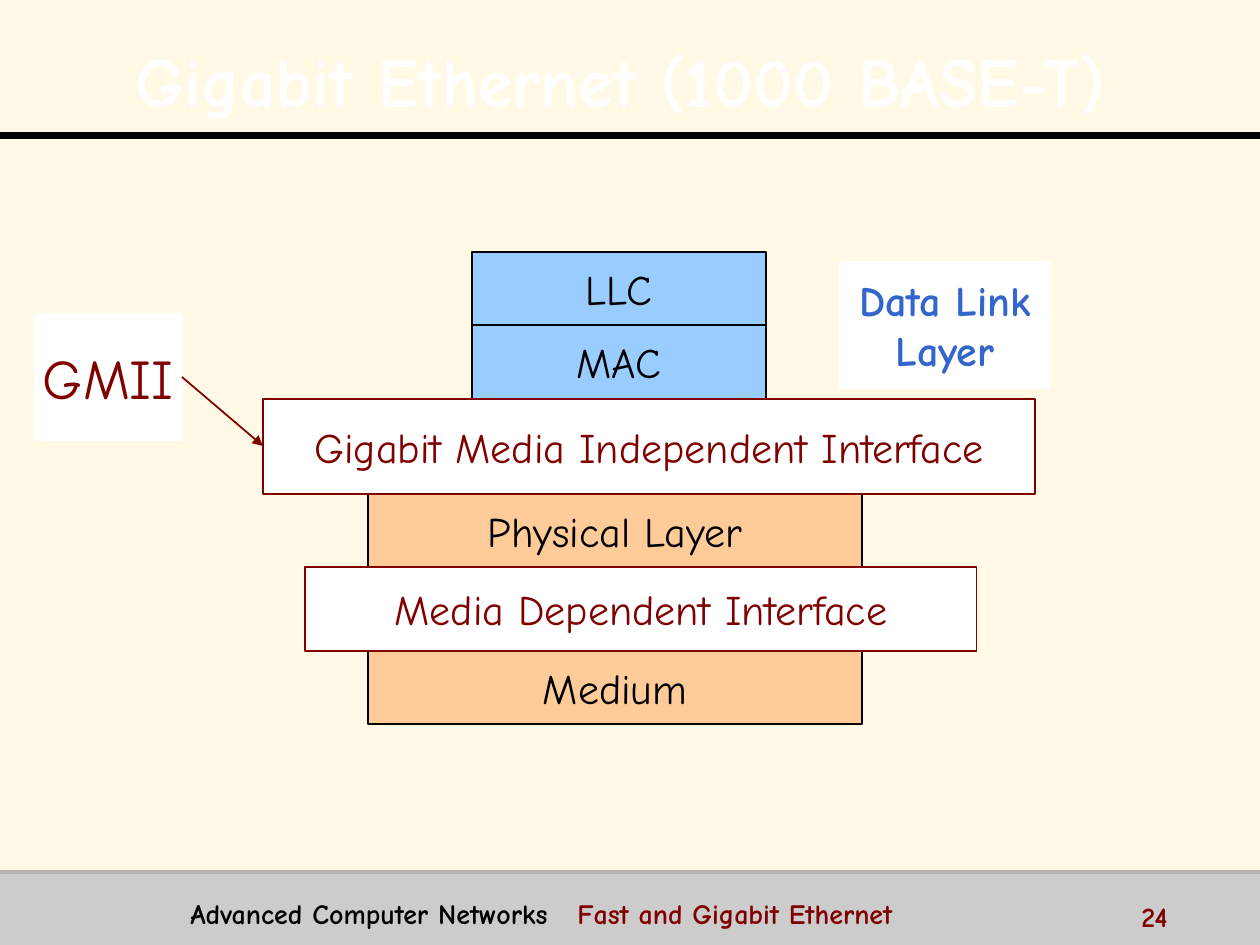
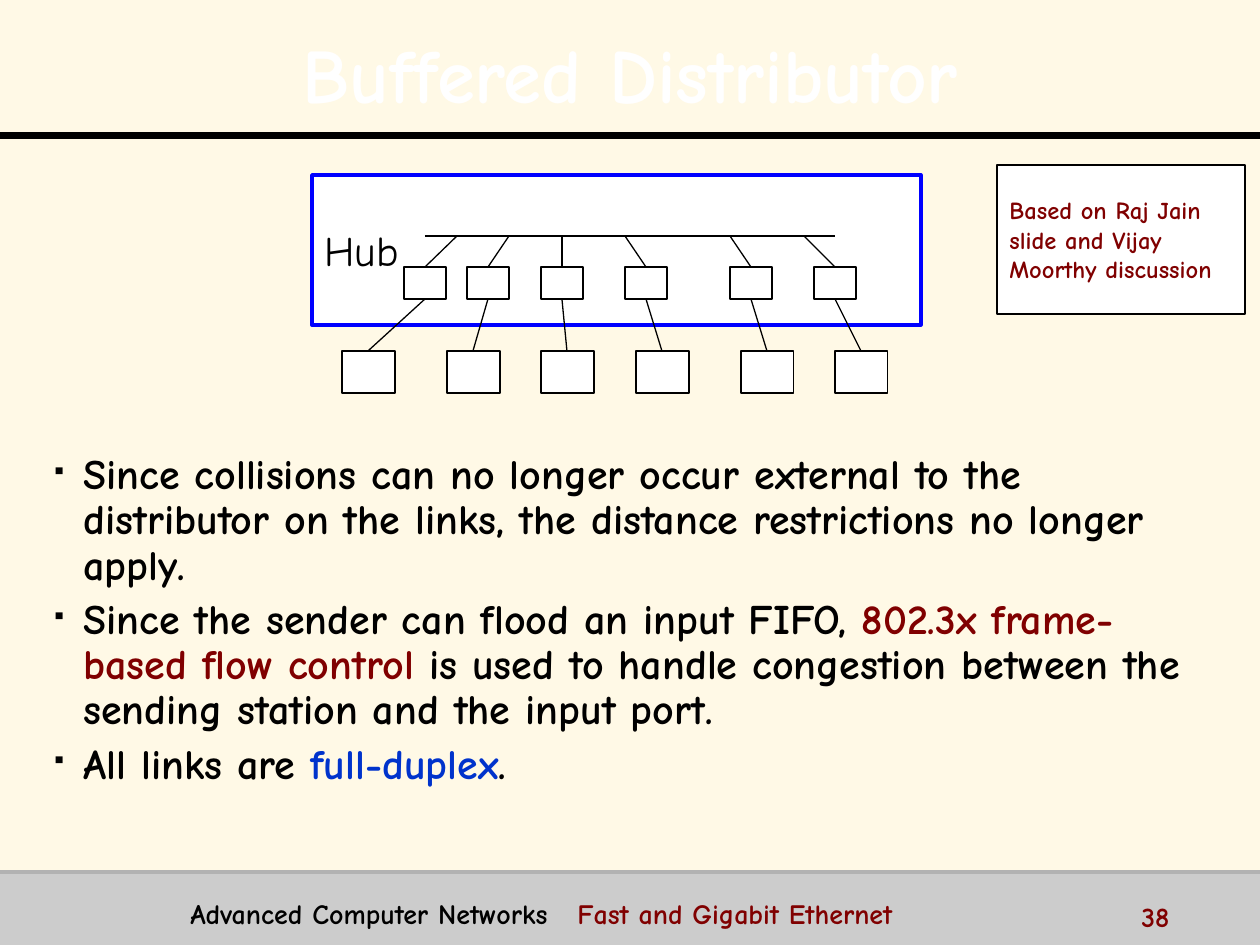
from itertools import accumulate

from lxml.etree import SubElement
from pptx import Presentation
from pptx.dml.color import RGBColor
from pptx.enum.shapes import MSO_CONNECTOR, MSO_SHAPE
from pptx.enum.text import MSO_ANCHOR, PP_ALIGN
from pptx.oxml import parse_xml
from pptx.oxml.ns import nsdecls, qn
from pptx.util import Inches, Pt

PX = 7257  # EMU per px at 126 px to the inch
FONT = "Comic Neue"
COLOURS = {
    "cream": "FFF9E6", "white": "FFFFFF", "black": "000000",
    "band": "CCCCCC", "band edge": "B2B2B2", "maroon": "800000",
    "sky": "99CCFF", "peach": "FFCC99", "link blue": "3366CC",
    "hub blue": "0000FF", "duplex blue": "0033CC",
}
RGB = {name: RGBColor.from_string(value) for name, value in COLOURS.items()}


def add_box(slide, area, lines=(), size=24, ink="black", bold=False, fill=None,
            edge=None, edge_width=0.75, align=PP_ALIGN.CENTER):
    """Add a filled rectangle, or a wrapping text box if fill is None.

    Each line is a string or a list of (text, colour) runs.
    """
    position = [n * PX for n in area]
    if fill:
        box = slide.shapes.add_shape(MSO_SHAPE.RECTANGLE, *position)
        box.shadow.inherit = False
        box.fill.solid()
        box.fill.fore_color.rgb = RGB[fill]
        if edge:
            box.line.color.rgb = RGB[edge]
            box.line.width = Pt(edge_width)
        else:
            box.line.fill.background()
    else:
        box = slide.shapes.add_textbox(*position)
    frame = box.text_frame
    frame.word_wrap = fill is None
    frame.vertical_anchor = MSO_ANCHOR.MIDDLE if fill else MSO_ANCHOR.TOP
    for i, line in enumerate(lines):
        paragraph = frame.add_paragraph() if i else frame.paragraphs[0]
        paragraph.alignment = align
        for text, colour in [(line, ink)] if isinstance(line, str) else line:
            run = paragraph.add_run()
            run.text = text
            run.font.name = FONT
            run.font.size = Pt(size)
            run.font.bold = bold
            run.font.color.rgb = RGB[colour]
    return box


def add_line(slide, start, end, colour="black", width=0.75, arrow=False):
    ends = [n * PX for n in (*start, *end)]
    line = slide.shapes.add_connector(MSO_CONNECTOR.STRAIGHT, *ends)
    line.line.color.rgb = RGB[colour]
    line.line.width = Pt(width)
    if arrow:
        SubElement(line.get_or_add_ln(), qn("a:tailEnd"), type="triangle")
    SubElement(line._element.spPr, qn("a:effectLst"))


deck = Presentation()
deck.slide_width, deck.slide_height = Inches(10), Inches(7.5)

# Shared frame: background, title, rules and footer
pages = [
    ("Gigabit Ethernet (1000 BASE-T)", 40, (15, -4, 1211, 159), "24"),
    ("Buffered Distributor", 44, (95, 21, 1071, 95), "38"),
]
slides = []
for title, title_size, title_area, number in pages:
    slide = deck.slides.add_slide(deck.slide_layouts[6])
    slides.append(slide)
    slide.background.fill.solid()
    slide.background.fill.fore_color.rgb = RGB["cream"]
    add_box(slide, (0, 872, 1260, 73), fill="band")
    add_line(slide, (0, 136), (1260, 136), width=4)
    add_line(slide, (0, 872), (1260, 872), "band edge", 2)

    heading = add_box(slide, title_area, [title], title_size, "white", True).text_frame
    heading.vertical_anchor = MSO_ANCHOR.MIDDLE
    heading.paragraphs[0].line_spacing = 1.1
    title_run = heading.paragraphs[0].runs[0]
    title_run.font._element.find(qn("a:solidFill")).addnext(parse_xml(
        f'<a:effectLst {nsdecls("a")}><a:outerShdw dist="25400" dir="2700000">'
        f'<a:srgbClr val="{COLOURS["black"]}"/></a:outerShdw></a:effectLst>'))

    course = add_box(
        slide, (178, 890, 917, 39),
        [[("Advanced Computer Networks\t", "black"), ("Fast and Gigabit Ethernet", "maroon")]],
        16, bold=True, align=PP_ALIGN.LEFT)
    tabs = SubElement(course.text_frame.paragraphs[0]._p.get_or_add_pPr(), qn("a:tabLst"))
    SubElement(tabs, qn("a:tab"), pos=str(387 * PX), algn="l")
    add_box(slide, (1129, 893, 126, 32), [number], 16, "maroon", True, align=PP_ALIGN.LEFT)

layers_slide, hub_slide = slides

# Protocol stack, top to bottom: label, left, width, height, fill, ink
stack = [
    ("LLC", 472, 294, 73, "sky", "black"),
    ("MAC", 472, 294, 74, "sky", "black"),
    ("Gigabit Media Independent Interface", 263, 772, 95, "white", "maroon"),
    ("Physical Layer", 368, 494, 73, "peach", "black"),
    ("Media Dependent Interface", 305, 672, 84, "white", "maroon"),
    ("Medium", 368, 494, 73, "peach", "black"),
]
tops = accumulate((layer[3] for layer in stack), initial=252)
placed = list(zip(stack, tops))
# The interfaces lie over the edges of the layers
for (label, left, width, height, fill, ink), top in sorted(
        placed, key=lambda item: item[0][5] == "maroon"):
    add_box(layers_slide, (left, top, width, height), [label], ink=ink, fill=fill, edge=ink)
add_box(layers_slide, (840, 262, 210, 126), ["Data Link", "Layer"],
        ink="link blue", bold=True, fill="white", edge="white")
add_box(layers_slide, (35, 314, 147, 126), ["GMII"], 32, "maroon", fill="white", edge="white")
add_line(layers_slide, (182, 377), (263, 446), "maroon", 1, arrow=True)

# Hub with its bus, ports and stations
BUS_Y, PORT_Y, PORT_W, PORT_H = 236, 267, 42, 32
STATION_Y, STATION_W, STATION_H = 351, 53, 42
add_box(hub_slide, (312, 175, 609, 150), ["Hub"], fill="white",
        edge="hub blue", edge_width=2, align=PP_ALIGN.LEFT)
add_line(hub_slide, (425, BUS_Y), (835, BUS_Y))
bus_taps = (457, 509, 562, 625, 730, 804)
port_centres = (425, 488, 562, 646, 751, 835)
station_centres = (368, 473, 567, 662, 767, 861)
for tap, port, station in zip(bus_taps, port_centres, station_centres):
    add_box(hub_slide, (port - PORT_W // 2, PORT_Y, PORT_W, PORT_H),
            fill="white", edge="black")
    add_box(hub_slide, (station - STATION_W // 2, STATION_Y, STATION_W, STATION_H),
            fill="white", edge="black")
    add_line(hub_slide, (tap, BUS_Y), (port, PORT_Y))
    add_line(hub_slide, (port, PORT_Y + PORT_H), (station, STATION_Y))

add_box(hub_slide, (997, 165, 248, 149),
        ["Based on Raj Jain", "slide and Vijay", "Moorthy discussion"],
        14, "maroon", True, "white", "black", align=PP_ALIGN.LEFT)

points = [
    [("Since collisions can no longer occur external to the distributor on the links, "
      "the distance restrictions no longer apply.", "black")],
    [("Since the sender can flood an input FIFO, ", "black"),
     ("802.3x frame-based flow control", "maroon"),
     (" is used to handle congestion between the sending station and the input port.",
      "black")],
    [("All links are ", "black"), ("full-duplex", "duplex blue"), (".", "black")],
]
body = add_box(hub_slide, (39, 447, 1168, 412), points, bold=True, align=PP_ALIGN.LEFT)
for i, paragraph in enumerate(body.text_frame.paragraphs):
    properties = paragraph._p.get_or_add_pPr()
    properties.set("marL", str(32 * PX))
    properties.set("indent", str(-32 * PX))
    bullet_colour = SubElement(properties, qn("a:buClr"))
    SubElement(bullet_colour, qn("a:srgbClr"), val=COLOURS["black"])
    SubElement(properties, qn("a:buSzPct"), val="50000")
    SubElement(properties, qn("a:buChar"), char="▪")
    paragraph.line_spacing = 0.9
    if i:
        paragraph.space_before = Pt(5)

deck.save("out.pptx")
